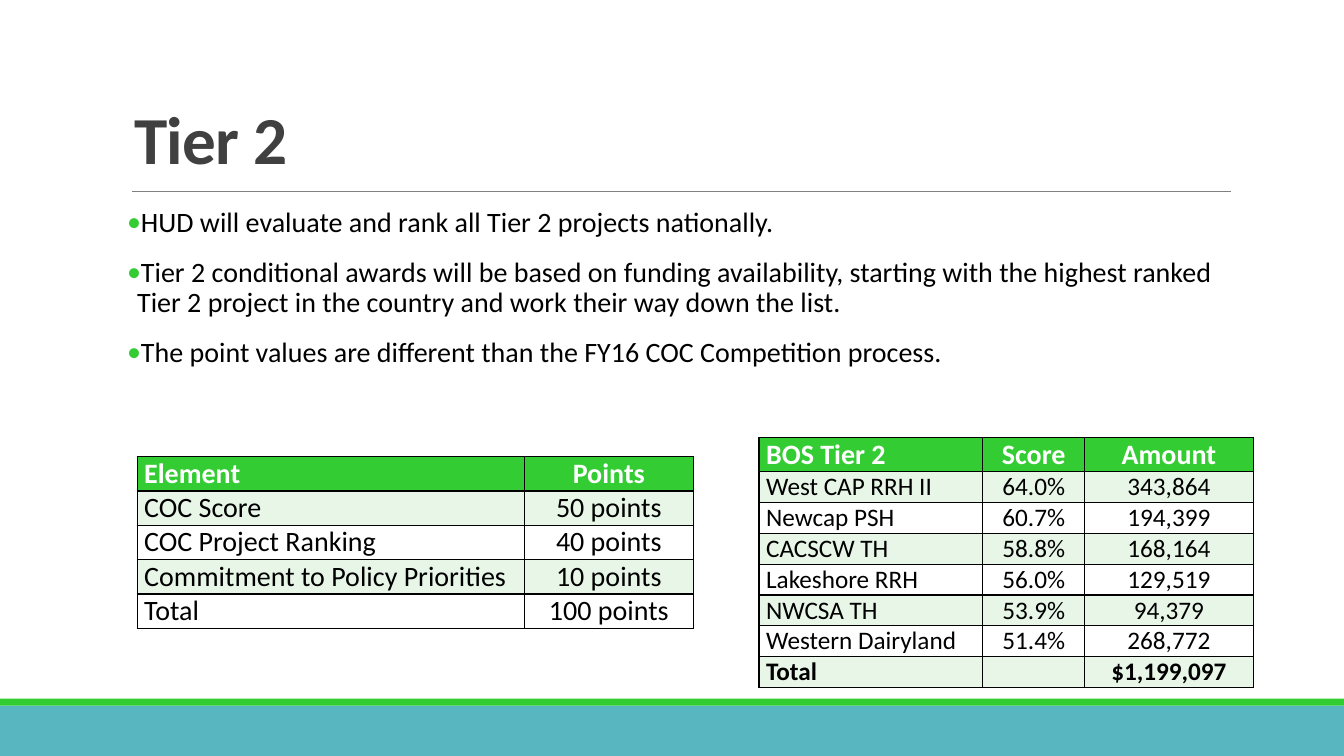
import dataclasses
import typing

import pptx
import pptx.dml.color
import pptx.enum.shapes
import pptx.enum.text
import pptx.oxml
import pptx.oxml.ns
import pptx.util

COLORS = {
    "white": "FFFFFF",
    "black": "000000",
    "green": "33CC33",
    "pale": "E8F6E8",
    "teal": "58B6C0",
    "heading": "404040",
    "rule": "808080",
}
FONT = "Calibri"
WIDTH = pptx.util.Inches(13.33)
HEIGHT = pptx.util.Inches(7.5)
ALIGN = pptx.enum.text.PP_ALIGN
ANCHOR = pptx.enum.text.MSO_ANCHOR


@dataclasses.dataclass(frozen=True)
class Area:
    """Position and size in percent of the slide."""
    left: float
    top: float
    width: float
    height: float


@dataclasses.dataclass(frozen=True)
class Band:
    area: Area
    color: str


@dataclasses.dataclass(frozen=True)
class ScoreTable:
    left: float
    top: float
    columns: tuple[float, ...]
    row_height: float
    size: int
    rows: tuple[tuple[str, ...], ...]
    bold_total: bool = False


HEADER_HEIGHT = 4.53
HEADER_SIZE = 20
TITLE_AREA = Area(9, 12.13, 82.5, 13.2)
BODY_AREA = Area(9.45, 26.93, 82.95, 30.93)
BANDS = (
    Band(Area(0, 93.33, 100, 6.67), "teal"),
    Band(Area(0, 92.4, 100, 0.93), "green"),
)
POINTS = (
    "HUD will evaluate and rank all Tier 2 projects nationally.",
    "Tier 2 conditional awards will be based on funding availability, starting with "
    "the highest ranked Tier 2 project in the country and work their way down the list.",
    "The point values are different than the FY16 COC Competition process.",
)
TABLES = (
    ScoreTable(10.2, 60.4, (28.8, 12.6), 4.53, 20, (
        ("Element", "Points"),
        ("COC Score", "50 points"),
        ("COC Project Ranking", "40 points"),
        ("Commitment to Policy Priorities", "10 points"),
        ("Total", "100 points"),
    )),
    ScoreTable(56.48, 57.87, (16.65, 7.58, 12.53), 4.07, 18, (
        ("BOS Tier 2", "Score", "Amount"),
        ("West CAP RRH II", "64.0%", "343,864"),
        ("Newcap PSH", "60.7%", "194,399"),
        ("CACSCW TH", "58.8%", "168,164"),
        ("Lakeshore RRH", "56.0%", "129,519"),
        ("NWCSA TH", "53.9%", "94,379"),
        ("Western Dairyland", "51.4%", "268,772"),
        ("Total", "", "$1,199,097"),
    ), bold_total=True),
)


def across(percent: float) -> int:
    return round(WIDTH * percent / 100)


def down(percent: float) -> int:
    return round(HEIGHT * percent / 100)


def rgb(name: str) -> pptx.dml.color.RGBColor:
    return pptx.dml.color.RGBColor.from_string(COLORS[name])


def add_xml(parent: typing.Any, tag: str, body: str = "", **attributes: str) -> None:
    listed = " ".join(f'{key}="{value}"' for key, value in attributes.items())
    namespace = pptx.oxml.ns.nsdecls("a")
    parent.append(pptx.oxml.parse_xml(f"<a:{tag} {namespace} {listed}>{body}</a:{tag}>"))


def solid(name: str) -> str:
    return f'<a:solidFill><a:srgbClr val="{COLORS[name]}"/></a:solidFill>'


def write(para: typing.Any, text: str, *, size: int, color: str = "black",
          bold: bool = False, align: ALIGN = ALIGN.LEFT) -> typing.Any:
    para.alignment = align
    span = para.add_run()
    span.text = text
    span.font.name = FONT
    span.font.size = pptx.util.Pt(size)
    span.font.bold = bold
    span.font.color.rgb = rgb(color)
    return span


def place(box: typing.Any, area: Area, anchor: ANCHOR, side: float, edge: float) -> typing.Any:
    box.left, box.top = across(area.left), down(area.top)
    box.width, box.height = across(area.width), down(area.height)
    frame = box.text_frame
    frame.word_wrap = True
    frame.auto_size = pptx.enum.text.MSO_AUTO_SIZE.NONE
    frame.vertical_anchor = anchor
    frame.margin_left = frame.margin_right = pptx.util.Inches(side)
    frame.margin_top = frame.margin_bottom = pptx.util.Inches(edge)
    return frame


def draw_band(page: typing.Any, band: Band) -> None:
    area = band.area
    shape = page.shapes.add_shape(
        pptx.enum.shapes.MSO_SHAPE.RECTANGLE,
        across(area.left), down(area.top), across(area.width), down(area.height))
    shape.shadow.inherit = False
    shape.fill.solid()
    shape.fill.fore_color.rgb = rgb(band.color)
    shape.line.fill.background()


def draw_rule(page: typing.Any) -> None:
    rule = page.shapes.add_connector(
        pptx.enum.shapes.MSO_CONNECTOR.STRAIGHT,
        across(9.83), down(25.33), across(91.58), down(25.33))
    rule.line.color.rgb = rgb("rule")
    rule.line.width = pptx.util.Pt(0.5)
    add_xml(rule._element.spPr, "effectLst")


def draw_title(page: typing.Any) -> None:
    frame = place(page.shapes.title, TITLE_AREA, ANCHOR.BOTTOM, 0.13, 0.13)
    para = frame.paragraphs[0]
    para.line_spacing = 0.85
    span = write(para, "Tier 2", size=48, color="heading", bold=True)
    span.font._element.set("spc", "-50")


def draw_points(page: typing.Any) -> None:
    frame = place(page.placeholders[1], BODY_AREA, ANCHOR.TOP, 0, 0.05)
    hanging = pptx.util.Inches(0.1)
    for index, point in enumerate(POINTS):
        para = frame.add_paragraph() if index else frame.paragraphs[0]
        para.line_spacing = 0.9
        para.space_before = pptx.util.Pt(12 if index else 0)
        para.space_after = pptx.util.Pt(2)
        properties = para._p.get_or_add_pPr()
        properties.set("marL", str(hanging))
        properties.set("indent", str(-hanging))
        add_xml(properties, "buClr", f'<a:srgbClr val="{COLORS["green"]}"/>')
        add_xml(properties, "buFont", typeface=FONT)
        add_xml(properties, "buChar", char="•")
        write(para, point, size=20)


def draw_table(page: typing.Any, plan: ScoreTable) -> None:
    last = len(plan.rows) - 1
    table = page.shapes.add_table(
        len(plan.rows), len(plan.columns), across(plan.left), down(plan.top),
        across(sum(plan.columns)), down(HEADER_HEIGHT + last * plan.row_height)).table
    table.first_row = table.horz_banding = False
    for column, width in zip(table.columns, plan.columns):
        column.width = across(width)
    for y, texts in enumerate(plan.rows):
        header = y == 0
        table.rows[y].height = down(plan.row_height if y else HEADER_HEIGHT)
        fill = "green" if header else "pale" if y % 2 else "white"
        for x, text in enumerate(texts):
            cell = table.cell(y, x)
            cell.margin_left = cell.margin_right = pptx.util.Inches(0.07)
            cell.margin_top = cell.margin_bottom = 0
            for side in ("lnL", "lnR", "lnT", "lnB"):
                add_xml(cell._tc.get_or_add_tcPr(), side, solid("black"), w="12700")
            cell.fill.solid()
            cell.fill.fore_color.rgb = rgb(fill)
            write(cell.text_frame.paragraphs[0], text,
                  size=HEADER_SIZE if header else plan.size,
                  color="white" if header else "black",
                  bold=header or (plan.bold_total and y == last),
                  align=ALIGN.CENTER if x else ALIGN.LEFT)


def main() -> None:
    deck = pptx.Presentation()
    deck.slide_width, deck.slide_height = WIDTH, HEIGHT
    page = deck.slides.add_slide(deck.slide_layouts[1])
    for band in BANDS:
        draw_band(page, band)
    draw_rule(page)
    draw_title(page)
    draw_points(page)
    for plan in TABLES:
        draw_table(page, plan)
    deck.save("out.pptx")


if __name__ == "__main__":
    main()
